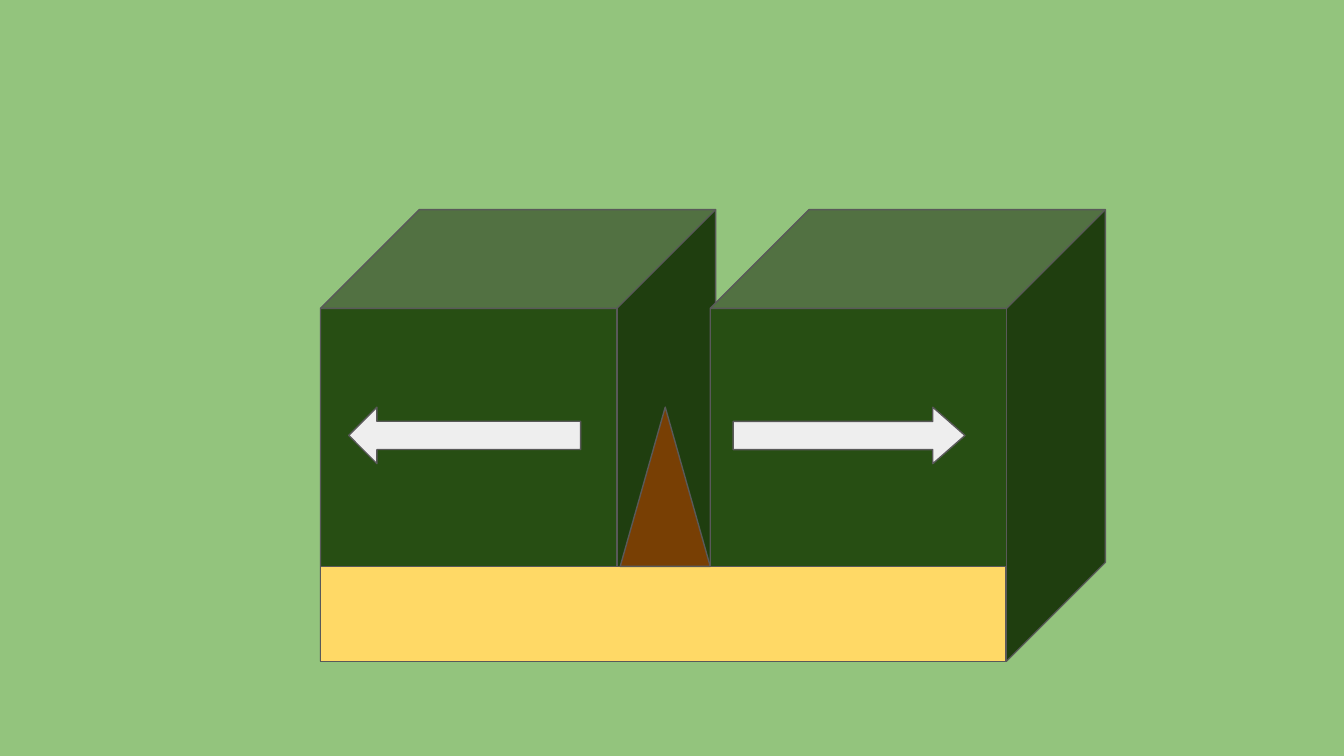
from dataclasses import dataclass

import pptx
import pptx.dml.color
import pptx.enum.shapes
import pptx.util

PX = 4572
SHAPE = pptx.enum.shapes.MSO_SHAPE


@dataclass(frozen=True)
class Theme:
    background: str = "93C47D"
    block: str = "274E13"
    arrow: str = "EEEEEE"
    base: str = "FFD966"
    wedge: str = "783F04"
    outline: str = "595959"
    outline_pt: float = 0.75


@dataclass(frozen=True)
class Part:
    kind: SHAPE
    left: int
    top: int
    width: int
    height: int
    color: str
    adjustments: tuple[float, ...] = ()
    rotation: int = 0


THEME = Theme()
WIDTH, HEIGHT = 2000, 1125
LEFT, RIFT = 477, 1057
BLOCK_TOP, BLOCK_WIDTH, BLOCK_HEIGHT = 312, 588, 672
ARROW_TOP, BASE_TOP = 606, 843
WEDGE_WIDTH = 134
BOTTOM = BLOCK_TOP + BLOCK_HEIGHT


def rgb(color: str) -> pptx.dml.color.RGBColor:
    return pptx.dml.color.RGBColor.from_string(color)


def block(left: int) -> Part:
    return Part(SHAPE.CUBE, left, BLOCK_TOP, BLOCK_WIDTH, BLOCK_HEIGHT,
                THEME.block, (0.25,))


def arrow(left: int, head: float, rotation: int) -> Part:
    return Part(SHAPE.LEFT_ARROW, left, ARROW_TOP, 345, 84,
                THEME.arrow, (0.5, head), rotation)


PARTS = (
    block(LEFT),
    block(RIFT),
    arrow(519, 0.5, 0),
    arrow(1091, 0.57, 180),
    Part(SHAPE.FLOWCHART_PROCESS, LEFT, BASE_TOP, 1020, BOTTOM - BASE_TOP, THEME.base),
    Part(SHAPE.ISOSCELES_TRIANGLE, RIFT - WEDGE_WIDTH, ARROW_TOP, WEDGE_WIDTH,
         BASE_TOP - ARROW_TOP, THEME.wedge, (0.5,)),
)


def set_format(obj: object, values: dict[str, object]) -> None:
    for name, value in values.items():
        setattr(obj, name, value)


def draw(s: pptx.slide.Slide, part: Part) -> None:
    box = (v * PX for v in (part.left, part.top, part.width, part.height))
    sp = s.shapes.add_shape(part.kind, *box)
    for i, value in enumerate(part.adjustments):
        sp.adjustments[i] = value
    sp.fill.solid()
    formats = (
        (sp, {"rotation": part.rotation}),
        (sp.shadow, {"inherit": False}),
        (sp.fill.fore_color, {"rgb": rgb(part.color)}),
        (sp.line.color, {"rgb": rgb(THEME.outline)}),
        (sp.line, {"width": pptx.util.Pt(THEME.outline_pt)}),
    )
    for obj, values in formats:
        set_format(obj, values)


def main() -> None:
    prs = pptx.Presentation()
    set_format(prs, {"slide_width": WIDTH * PX, "slide_height": HEIGHT * PX})
    s = prs.slides.add_slide(prs.slide_layouts[6])
    fill = s.background.fill
    fill.solid()
    fill.fore_color.rgb = rgb(THEME.background)
    for part in PARTS:
        draw(s, part)
    prs.save("out.pptx")


if __name__ == "__main__":
    main()
